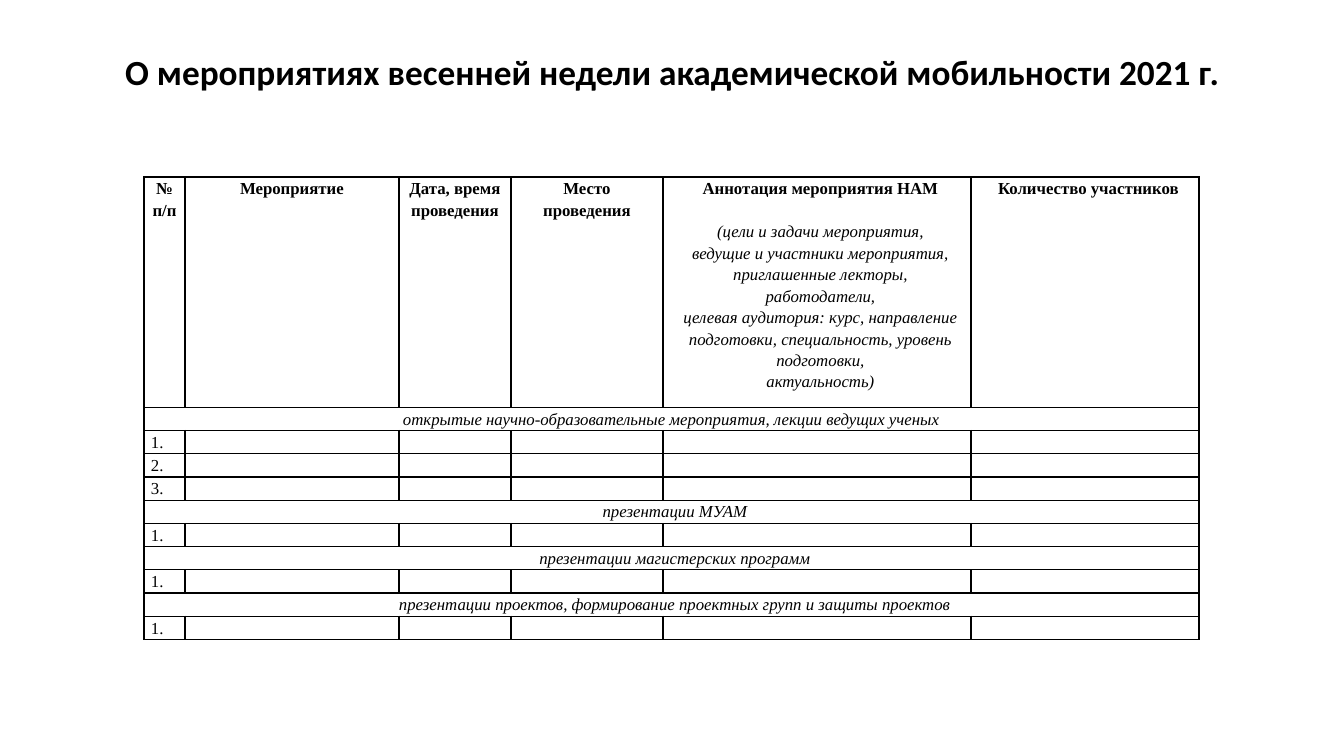
from lxml import etree
from pptx import Presentation
from pptx import util as u
from pptx.dml.color import RGBColor
from pptx.enum import text
from pptx.oxml import ns

BLACK = RGBColor(0, 0, 0)
SLIDE_WIDTH, SLIDE_HEIGHT = 1344, 756
CENTER, JUSTIFY = text.PP_ALIGN.CENTER, text.PP_ALIGN.JUSTIFY
COLUMN_WIDTHS = [41, 214, 112, 152, 308, 228]
HEADER_HEIGHT, ROW_HEIGHT = 215, 21
ANNOTATION_GAP = 15.5

HEADERS = ["№ п/п", "Мероприятие", "Дата, время проведения", "Место проведения",
           "Аннотация мероприятия НАМ", "Количество участников"]
ANNOTATION_COLUMN = 4
ANNOTATION = [
    "(цели и задачи мероприятия,",
    "ведущие и участники мероприятия,",
    "приглашенные лекторы, работодатели,",
    "целевая аудитория: курс, направление подготовки, специальность, уровень подготовки,",
    "актуальность)",
]
SECTIONS = [
    ("открытые научно-образовательные мероприятия, лекции ведущих ученых", 3, 0),
    ("презентации МУАМ", 1, 7),
    ("презентации магистерских программ", 1, 7),
    ("презентации проектов, формирование проектных групп и защиты проектов", 1, 7),
]


def px(length):
    return u.Emu(round(length * 12192000 / SLIDE_WIDTH))


def assign(target, values):
    for name, value in values.items():
        setattr(target, name, value)


class SlideBuilder:
    title_font = {"name": "Calibri", "size": u.Pt(25.2), "bold": True}
    table_font = {"name": "Times New Roman", "size": u.Pt(12), "bold": False, "italic": False}
    cell_format = {"margin_left": px(7), "margin_right": px(7),
                   "margin_top": 0, "margin_bottom": 0}

    def __init__(self, deck):
        self.page = deck.slides.add_slide(deck.slide_layouts[6])

    def fill_para(self, para, words, font, align=CENTER, spacing=1.15, indent=0):
        assign(para, {"alignment": align, "line_spacing": spacing})
        if indent:
            para._p.get_or_add_pPr().set("marL", str(px(indent)))
        span = para.add_run()
        span.text = words
        assign(span.font, font)
        span.font.color.rgb = BLACK

    def title(self, words, left, top, width, height):
        box = self.page.shapes.add_textbox(px(left), px(top), px(width), px(height))
        frame = box.text_frame
        assign(frame, {"word_wrap": True, "vertical_anchor": text.MSO_ANCHOR.MIDDLE})
        self.fill_para(frame.paragraphs[0], words, self.title_font, spacing=0.9)

    def table(self, left, top, widths, heights):
        frame = self.page.shapes.add_table(len(heights), len(widths), px(left), px(top),
                                           px(sum(widths)), px(sum(heights)))
        table = frame.table
        assign(table, {"first_row": False, "horz_banding": False})
        for column, width in zip(table.columns, widths):
            column.width = px(width)
        for row, height in zip(table.rows, heights):
            row.height = px(height)
            for cell in row.cells:
                self.style_cell(cell)
        return table

    def style_cell(self, cell):
        assign(cell, self.cell_format)
        properties = cell._tc.get_or_add_tcPr()
        for side in ("lnL", "lnR", "lnT", "lnB"):
            line = etree.SubElement(properties, ns.qn(f"a:{side}"), w=str(u.Pt(1)))
            fill = etree.SubElement(line, ns.qn("a:solidFill"))
            etree.SubElement(fill, ns.qn("a:srgbClr"), val=str(BLACK))
        cell.fill.background()
        para = cell.text_frame.paragraphs[0]
        para.line_spacing = 1.15
        ending = etree.SubElement(para._p, ns.qn("a:endParaRPr"), sz="1200")
        etree.SubElement(ending, ns.qn("a:latin"), typeface=self.table_font["name"])

    def cell(self, cell, words, align=CENTER, indent=0, **emphasis):
        self.fill_para(cell.text_frame.paragraphs[0], words, self.table_font | emphasis,
                       align, indent=indent)

    def annotation(self, cell, lines, indent):
        for index, words in enumerate(lines):
            para = cell.text_frame.add_paragraph()
            if index == 0:
                para.space_before = u.Pt(ANNOTATION_GAP)
            self.fill_para(para, words, self.table_font | {"italic": True}, indent=indent)


def main():
    deck = Presentation()
    assign(deck, {"slide_width": px(SLIDE_WIDTH), "slide_height": px(SLIDE_HEIGHT)})
    builder = SlideBuilder(deck)
    builder.title("О мероприятиях весенней недели академической мобильности 2021 г.",
                  93, 40, 1159, 68)

    row_count = sum(1 + count for _, count, _ in SECTIONS)
    events = builder.table(144, 177, COLUMN_WIDTHS,
                           [HEADER_HEIGHT] + [ROW_HEIGHT] * row_count)
    for column, words in enumerate(HEADERS):
        indent = 7 if column >= ANNOTATION_COLUMN else 0
        builder.cell(events.cell(0, column), words, indent=indent, bold=True)
    builder.annotation(events.cell(0, ANNOTATION_COLUMN), ANNOTATION, 7)

    row = 1
    for heading, count, indent in SECTIONS:
        section = events.cell(row, 0)
        section.merge(events.cell(row, len(COLUMN_WIDTHS) - 1))
        builder.cell(section, heading, indent=indent, italic=True)
        for number in range(1, count + 1):
            builder.cell(events.cell(row + number, 0), f"{number}.", JUSTIFY)
        row += count + 1

    deck.save("out.pptx")


if __name__ == "__main__":
    main()
